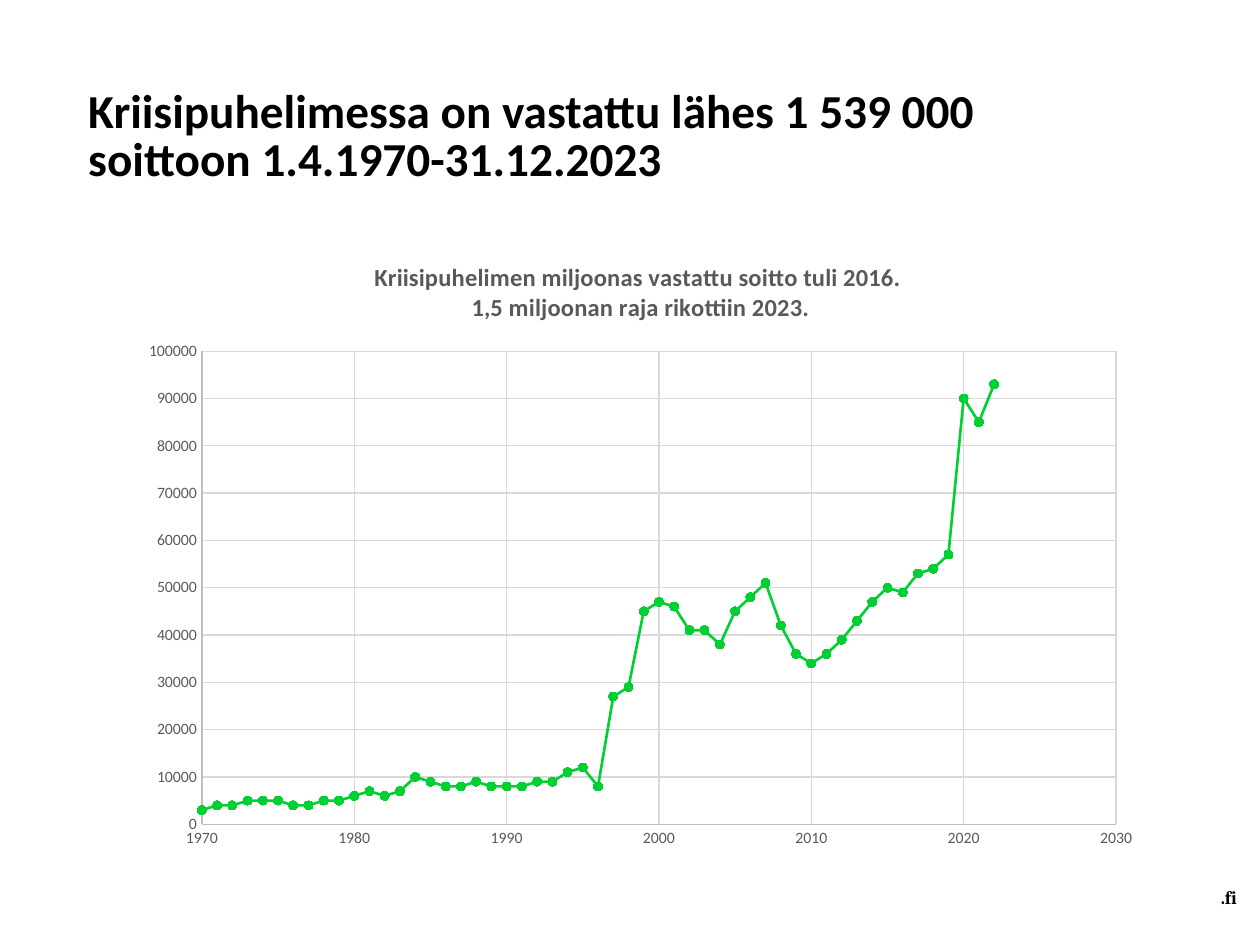
from dataclasses import dataclass

import lxml.etree
import pptx
import pptx.chart.data
import pptx.dml.color
import pptx.enum.chart
import pptx.enum.text
import pptx.oxml.ns
import pptx.util

Cm = pptx.util.Cm
Pt = pptx.util.Pt
qn = pptx.oxml.ns.qn
RGBColor = pptx.dml.color.RGBColor

BLACK = RGBColor(0x00, 0x00, 0x00)
GREY = RGBColor(0x59, 0x59, 0x59)
AXIS_GREY = RGBColor(0xBF, 0xBF, 0xBF)
GRID_GREY = RGBColor(0xD9, 0xD9, 0xD9)
GREEN = RGBColor(0x00, 0xD0, 0x32)

FIRST_YEAR = 1970
CALLS = [
    3000, 4000, 4000, 5000, 5000, 5000, 4000, 4000, 5000, 5000,
    6000, 7000, 6000, 7000, 10000, 9000, 8000, 8000, 9000, 8000,
    8000, 8000, 9000, 9000, 11000, 12000, 8000, 27000, 29000, 45000,
    47000, 46000, 41000, 41000, 38000, 45000, 48000, 51000, 42000, 36000,
    34000, 36000, 39000, 43000, 47000, 50000, 49000, 53000, 54000, 57000,
    90000, 85000, 93000,
]
CHART_TITLE = [
    "Kriisipuhelimen miljoonas vastattu soitto tuli 2016. ",
    "1,5 miljoonan raja rikottiin 2023.",
]


@dataclass(frozen=True)
class Box:
    left: float
    top: float
    width: float
    height: float


@dataclass(frozen=True)
class Label:
    text: str
    box: Box
    font: str
    size: float
    wrap: bool
    line_spacing: float | pptx.util.Length


@dataclass(frozen=True)
class AxisScale:
    low: int
    high: int
    step: int


LABELS = [
    Label(".fi", Box(24.36, 17.73, 0.86, 1.14), "Cambria", 10.5, False, 1.0),
    Label("Kriisipuhelimessa on vastattu lähes 1 539 000 soittoon 1.4.1970-31.12.2023",
          Box(1.53, 1.71, 19.38, 2.77), "Calibri", 27, True, Pt(27)),
]
CHART = Box(2.59, 4.78, 20.65, 12.55)
PLOT = Box(1.48, 2.3, 18.43, 9.54)
YEARS = AxisScale(FIRST_YEAR, 2030, 10)
CALL_COUNTS = AxisScale(0, 100000, 10000)


def apply(target: object, values: dict) -> None:
    for name, value in values.items():
        setattr(target, name, value)


def lengths(box: Box) -> list[pptx.util.Length]:
    return [Cm(n) for n in (box.left, box.top, box.width, box.height)]


def style_font(font, name: str, size: float, bold: bool, color: RGBColor) -> None:
    apply(font, {"name": name, "size": Pt(size), "bold": bold})
    font.color.rgb = color


def style_line(line, width: float, color: RGBColor) -> None:
    line.width = Pt(width)
    line.color.rgb = color


def add_label(s, label: Label) -> None:
    sp = s.shapes.add_textbox(*lengths(label.box))
    tf = sp.text_frame
    apply(tf, {"word_wrap": label.wrap,
               "vertical_anchor": pptx.enum.text.MSO_ANCHOR.TOP})
    p = tf.paragraphs[0]
    p.line_spacing = label.line_spacing
    r = p.add_run()
    r.text = label.text
    style_font(r.font, label.font, label.size, True, BLACK)


def style_axis(axis, scale: AxisScale) -> None:
    none = pptx.enum.chart.XL_TICK_MARK.NONE
    apply(axis, {
        "minimum_scale": scale.low,
        "maximum_scale": scale.high,
        "major_unit": scale.step,
        "major_tick_mark": none,
        "minor_tick_mark": none,
        "has_major_gridlines": True,
        "has_title": False,
    })
    apply(axis.tick_labels, {"number_format": "0", "number_format_is_linked": False})
    style_font(axis.tick_labels.font, "Calibri", 9, False, GREY)
    style_line(axis.format.line, 0.75, AXIS_GREY)
    style_line(axis.major_gridlines.format.line, 0.75, GRID_GREY)


def place_plot(chart, frame: Box, plot: Box) -> None:
    area = chart._chartSpace.find(".//" + qn("c:plotArea"))
    old = area.find(qn("c:layout"))
    if old is not None:
        area.remove(old)
    holder = lxml.etree.Element(qn("c:layout"))
    area.insert(0, holder)
    manual = lxml.etree.SubElement(holder, qn("c:manualLayout"))
    settings = {
        "layoutTarget": "inner",
        "xMode": "edge",
        "yMode": "edge",
        "x": plot.left / frame.width,
        "y": plot.top / frame.height,
        "w": plot.width / frame.width,
        "h": plot.height / frame.height,
    }
    for tag, value in settings.items():
        lxml.etree.SubElement(manual, qn("c:" + tag)).set("val", str(value))


def add_calls_chart(s) -> None:
    data = pptx.chart.data.XyChartData()
    points = data.add_series("Series 1")
    for year, calls in enumerate(CALLS, FIRST_YEAR):
        points.add_data_point(year, calls)
    chart = s.shapes.add_chart(pptx.enum.chart.XL_CHART_TYPE.XY_SCATTER_LINES,
                               *lengths(CHART), data).chart
    apply(chart, {"has_legend": False, "has_title": True})
    style_font(chart.font, "Calibri", 10, False, BLACK)

    tf = chart.chart_title.text_frame
    for i, text in enumerate(CHART_TITLE):
        p = tf.add_paragraph() if i else tf.paragraphs[0]
        r = p.add_run()
        r.text = text
        style_font(r.font, "Calibri", 14, True, GREY)

    style_axis(chart.category_axis, YEARS)
    style_axis(chart.value_axis, CALL_COUNTS)
    plot = chart.plots[0]
    plot.vary_by_categories = False
    series = plot.series[0]
    series.smooth = False
    style_line(series.format.line, 1.5, GREEN)
    marker = series.marker
    apply(marker, {"style": pptx.enum.chart.XL_MARKER_STYLE.CIRCLE, "size": 5})
    marker.format.fill.solid()
    marker.format.fill.fore_color.rgb = GREEN
    style_line(marker.format.line, 0.75, GREEN)
    place_plot(chart, CHART, PLOT)


def main() -> None:
    prs = pptx.Presentation()
    apply(prs, {"slide_width": Cm(25.4), "slide_height": Cm(19.05)})
    s = prs.slides.add_slide(prs.slide_layouts[6])
    add_calls_chart(s)
    for label in LABELS:
        add_label(s, label)
    prs.save("out.pptx")


if __name__ == "__main__":
    main()
